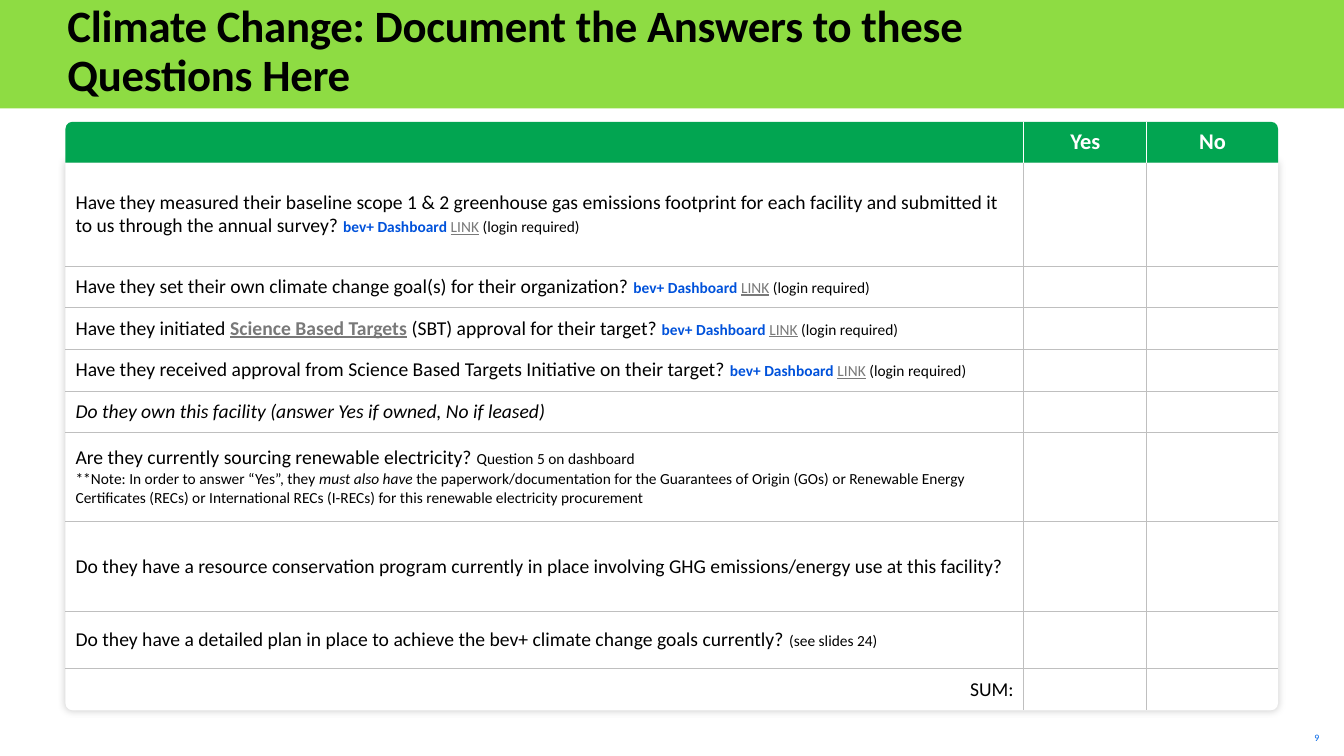
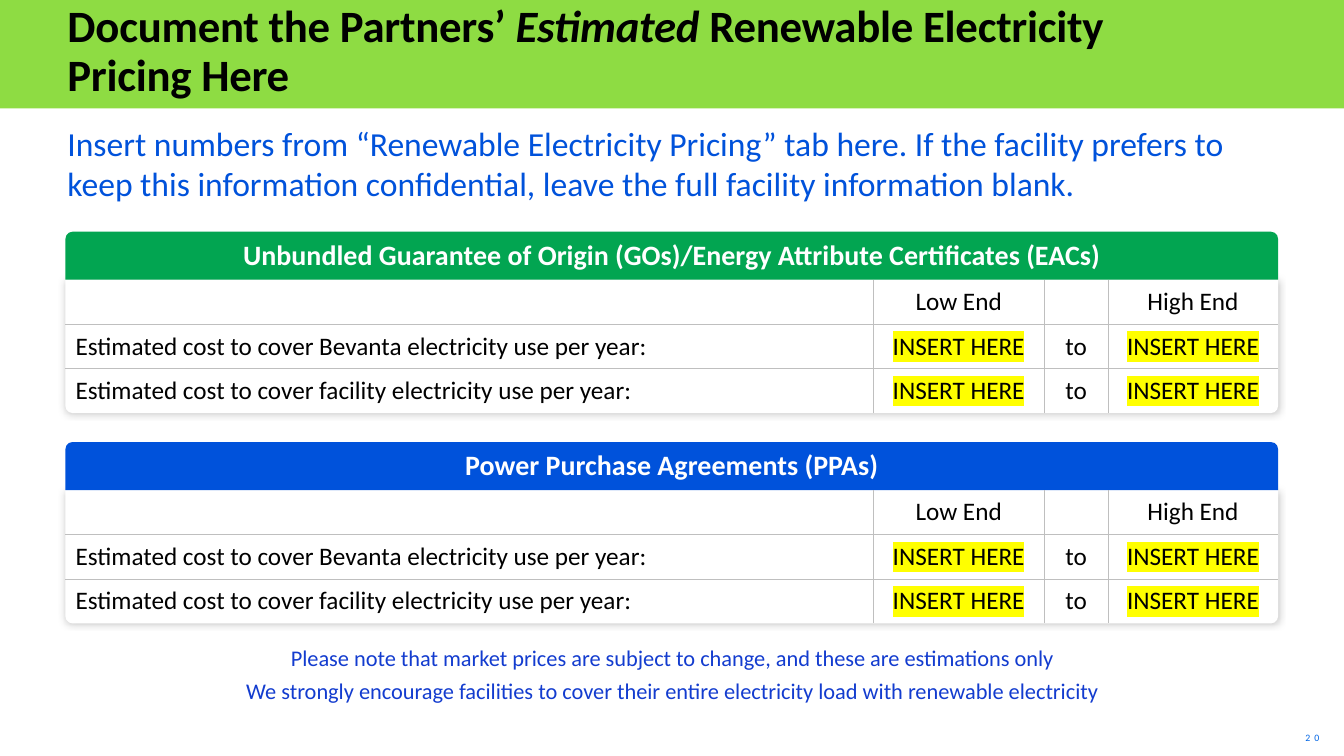
from lxml import etree
from pptx import Presentation, util as u
from pptx.dml.color import RGBColor
from pptx.enum import shapes, text
from pptx.oxml.ns import qn

LEFT, WIDE, ROUND = 1.65, 30.56, 0.18
GREEN, BLUE, GREY, WHITE = "02A551", "0052DB", "BFBFBF", "FFFFFF"
ALIGN = text.PP_ALIGN
NO_STYLE = "{2D5ABB26-0587-4C30-8999-92F81FD0307C}"


def paint(fill, hue):
    fill.solid()
    fill.fore_color.rgb = RGBColor.from_string(hue)


def write(frame, paras, look, form):
    frame.word_wrap = True
    for i, runs in enumerate(paras):
        para = frame.add_paragraph() if i else frame.paragraphs[0]
        for key, val in form.items():
            setattr(para, key, val)
        for item in runs:
            words, mods = (item, {}) if isinstance(item, str) else item
            if words == "\n":
                para.add_line_break()
                continue
            run = para.add_run()
            run.text = words
            style = {"tint": "000000", "mark": None, "space": 0, "name": "Calibri"} | look | mods
            paint(run.font.fill, style.pop("tint"))
            props = run.font._element
            mark, space = style.pop("mark"), style.pop("space")
            if mark:
                light = etree.SubElement(props, qn("a:highlight"))
                etree.SubElement(light, qn("a:srgbClr"), val=mark)
            if space:
                props.set("spc", str(space))
            for key, val in style.items():
                setattr(run.font, key, val)


small = {"size": u.Pt(11)}
slant = {"italic": True}
link = {"tint": "797979", "underline": True}
login = [
    ("bev+ Dashboard ", small | {"tint": BLUE, "bold": True}),
    ("LINK", small | link),
    (" (login required)", small),
]
asks = [
    [["Have they measured their baseline scope 1 & 2 greenhouse gas emissions footprint "
      "for each facility and submitted it to us through the annual survey? ", *login]],
    [["Have they set their own climate change goal(s) for their organization? ", *login]],
    [["Have they initiated ", ("Science Based Targets", link | {"bold": True}),
      " (SBT) approval for their target? ", *login]],
    [["Have they received approval from Science Based Targets Initiative on their target? ", *login]],
    [[("Do they own this facility (answer Yes if owned, No if leased)", slant)]],
    [["Are they currently sourcing renewable electricity? ", ("Question 5 on dashboard", small)],
     [("**Note: In order to answer “Yes”, they ", small), ("must also have ", small | slant),
      ("the paperwork/documentation for the Guarantees of Origin (GOs) or Renewable Energy "
       "Certificates (RECs) or International RECs (I-RECs) for this renewable electricity "
       "procurement", small)]],
    [["Do they have a resource conservation program currently in place involving GHG "
      "emissions/energy use at this facility?"]],
    [["Do they have a detailed plan in place to achieve the bev+ climate change goals currently? ",
      ("(see slides 24)", small)]],
    [["SUM:"]],
]
survey = {
    "top": 3.07, "hue": GREEN, "head": 16, "body": 14, "last": ALIGN.RIGHT,
    "cols": [24.15, 3.1, 3.31],
    "rows": [1.03, 2.6, 1.05, 1.05, 1.05, 1.05, 2.24, 2.26, 1.45, 1.05],
    "cells": [[None, [["Yes"]], [["No"]]]] + [[ask, None, None] for ask in asks],
}

slot = [[("INSERT HERE", {"mark": "FFFF00"})]]
prices = [
    {
        "top": top, "hue": hue, "head": 20, "body": 18, "last": ALIGN.LEFT,
        "cols": [20.35, 4.32, 1.6, 4.29],
        "rows": [1.21, 1.12, 1.12, 1.12],
        "cells": [[[[name]]], [None, [["Low End"]], None, [["High End"]]]]
        + [[[[f"Estimated cost to cover {who} electricity use per year:"]], slot, [["to"]], slot]
           for who in ("Bevanta", "facility")],
    }
    for top, hue, name in (
        (5.84, GREEN, "Unbundled Guarantee of Origin (GOs)/Energy Attribute Certificates (EACs)"),
        (11.14, BLUE, "Power Purchase Agreements (PPAs)"),
    )
]

bold = {"size": u.Pt(32), "bold": True, "space": -20}
intro = ("Insert numbers from “Renewable Electricity Pricing” tab here. If the facility prefers to "
         "keep this information confidential, leave the full facility information blank.")
notes = [
    ["Please note that market prices are subject to change, and these are estimations only"],
    ["We strongly encourage facilities to cover their entire electricity load with renewable electricity"],
]
MID, TOP = text.MSO_ANCHOR.MIDDLE, text.MSO_ANCHOR.TOP
pages = [
    {
        "num": "9", "tables": [survey], "texts": [],
        "title": ["Climate Change: Document the Answers to these", "\n", "Questions Here"],
    },
    {
        "num": "20", "tables": prices,
        "title": ["Document the Partners’ ", ("Estimated", slant), " Renewable Electricity",
                  "\n", "Pricing Here"],
        "texts": [
            (3.1, 2, TOP, [[intro]], {"size": u.Pt(24), "tint": BLUE}, {}),
            (16.43, 1.12, MID, notes, {"size": u.Pt(16), "tint": "133CCF"},
             {"alignment": ALIGN.CENTER, "space_after": u.Pt(4)}),
        ],
    },
]

deck = Presentation()
deck.slide_width, deck.slide_height = u.Cm(33.87), u.Cm(19.05)

for page in pages:
    slide = deck.slides.add_slide(deck.slide_layouts[6])
    band = slide.shapes.add_shape(
        shapes.MSO_SHAPE.RECTANGLE, 0, 0, deck.slide_width, u.Cm(2.73))
    band.shadow.inherit = False
    band.line.fill.background()
    paint(band.fill, "8EDC43")

    foot = slide.shapes.add_textbox(u.Cm(30.73), u.Cm(18.31), u.Cm(2.77), u.Cm(0.56))
    write(foot.text_frame, [[page["num"]]],
          {"size": u.Pt(7), "tint": "0065E5", "space": 300}, {"alignment": ALIGN.RIGHT})

    title = (0.46, 1.73, MID, [page["title"]], bold, {"line_spacing": 0.9})
    for top, high, anchor, paras, look, form in [title, *page["texts"]]:
        box = slide.shapes.add_textbox(u.Cm(1.7), u.Cm(top), u.Cm(30.5), u.Cm(high))
        frame = box.text_frame
        for side in ("left", "right", "top", "bottom"):
            setattr(frame, f"margin_{side}", 0)
        frame.vertical_anchor = anchor
        write(frame, paras, look, form)

    for tab in page["tables"]:
        top, cols, rows = tab["top"], tab["cols"], tab["rows"]
        head, full = rows[0], sum(rows)
        low = full - head
        for y, high, hue, bends in (
            (top + head, low, WHITE, (0, ROUND / low)),
            (top, head, tab["hue"], (ROUND / head, 0)),
        ):
            card = slide.shapes.add_shape(
                shapes.MSO_SHAPE.ROUND_2_SAME_RECTANGLE,
                u.Cm(LEFT), u.Cm(y), u.Cm(WIDE), u.Cm(high))
            for i, bend in enumerate(bends):
                card.adjustments[i] = bend
            card.shadow.inherit = False
            card.line.fill.background()
            paint(card.fill, hue)
            if hue == WHITE:
                glow = etree.SubElement(
                    card.element.spPr.find(qn("a:effectLst")), qn("a:outerShdw"),
                    blurRad=str(u.Pt(5)), dist="0", dir="0", algn="ctr", rotWithShape="0")
                shade = etree.SubElement(glow, qn("a:srgbClr"), val="000000")
                etree.SubElement(shade, qn("a:alpha"), val="20000")

        grid = slide.shapes.add_table(
            len(rows), len(cols), u.Cm(LEFT), u.Cm(top), u.Cm(WIDE), u.Cm(full))
        table = grid.table
        table.first_row = table.horz_banding = False
        grid.element.xpath(".//a:tableStyleId")[0].text = NO_STYLE
        for col, size in zip(table.columns, cols):
            col.width = u.Cm(size)
        for row, size in zip(table.rows, rows):
            row.height = u.Cm(size)

        end, edge = len(rows) - 1, len(cols) - 1
        for r, line in enumerate(tab["cells"]):
            span = len(line) == 1
            if span:
                table.cell(r, 0).merge(table.cell(r, edge))
            for c, paras in enumerate(line):
                cell = table.cell(r, c)
                cell.vertical_anchor = MID
                props = cell._tc.get_or_add_tcPr()
                rules = {
                    "L": c > 0,
                    "R": c < edge and not span,
                    "T": r > 1,
                    "B": 0 < r < end,
                }
                for side, shown in rules.items():
                    rule = etree.SubElement(props, qn(f"a:ln{side}"), w=str(u.Pt(0.5)))
                    if shown:
                        ink = etree.SubElement(rule, qn("a:solidFill"))
                        etree.SubElement(ink, qn("a:srgbClr"), val=GREY if r else WHITE)
                    else:
                        etree.SubElement(rule, qn("a:noFill"))
                cell.fill.background()
                if not paras:
                    continue
                if r == 0:
                    look = {"size": u.Pt(tab["head"]), "bold": True, "tint": WHITE}
                else:
                    look = {"size": u.Pt(tab["body"])}
                if r == 0 or c:
                    form = {"alignment": ALIGN.CENTER}
                else:
                    form = {"alignment": tab["last"] if r == end else ALIGN.LEFT}
                write(cell.text_frame, paras, look, form)

deck.save("out.pptx")
